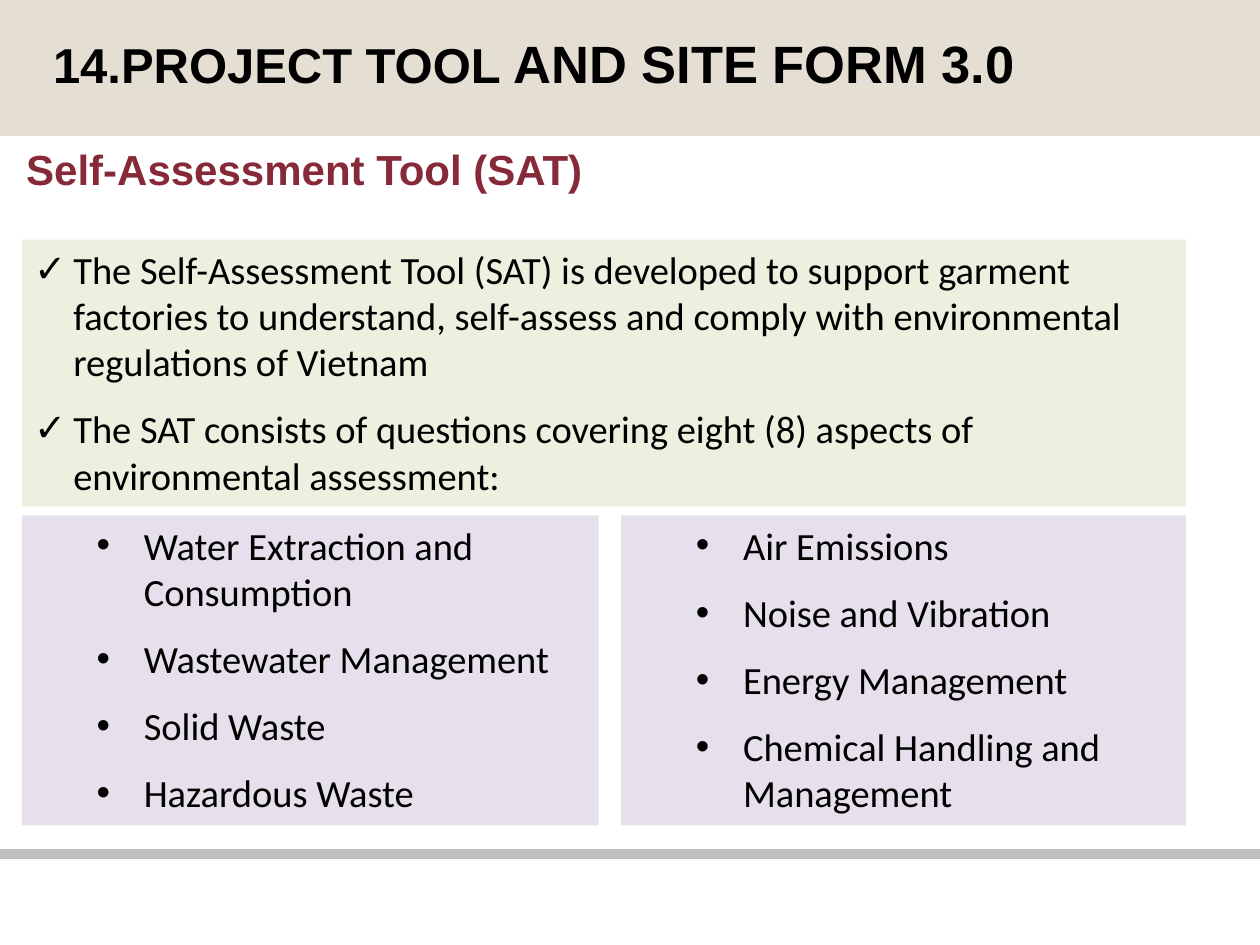
from lxml import etree
from pptx import Presentation
from pptx import util as u
from pptx.dml.color import RGBColor
from pptx.enum import shapes, text
from pptx.oxml import ns

BLACK = RGBColor(0x00, 0x00, 0x00)
MAROON = RGBColor(0x86, 0x2A, 0x39)
SAND = RGBColor(0xE4, 0xDF, 0xD2)
GREY = RGBColor(0xBF, 0xBF, 0xBF)
GREEN = RGBColor(0xEB, 0xF1, 0xDE)
LILAC = RGBColor(0xE6, 0xE0, 0xEC)


class SlideBuilder:
    heading_font = "Arial"
    body_font = "Calibri"
    body_size = 22

    def __init__(self, slide):
        self.slide = slide

    def bar(self, left, top, width, height, fill, line_width=None):
        bar = self.slide.shapes.add_shape(
            shapes.MSO_SHAPE.RECTANGLE, *map(u.Cm, (left, top, width, height)))
        bar.shadow.inherit = False
        bar.fill.solid()
        bar.fill.fore_color.rgb = fill
        if line_width:
            bar.line.color.rgb = fill
            bar.line.width = u.Pt(line_width)
        else:
            bar.line.fill.background()
        return bar

    def heading(self, left, top, width, height, parts, color):
        """Add a bold one-line heading from (wording, size) parts."""
        box = self.slide.shapes.add_textbox(*map(u.Cm, (left, top, width, height)))
        frame = box.text_frame
        frame.word_wrap = True
        paragraph = frame.paragraphs[0]
        self.style(paragraph, self.heading_font, color, bold=True)
        for wording, size in parts:
            run = paragraph.add_run()
            run.text = wording
            run.font.size = u.Pt(size)
        return frame

    def panel(self, left, top, width, height, fill, items, bullet, margin, hanging, level=0):
        frame = self.bar(left, top, width, height, fill).text_frame
        frame.word_wrap = True
        frame.auto_size = text.MSO_AUTO_SIZE.SHAPE_TO_FIT_TEXT
        frame.vertical_anchor = text.MSO_ANCHOR.TOP
        for index, item in enumerate(items):
            paragraph = frame.add_paragraph() if index else frame.paragraphs[0]
            paragraph.text = item
            paragraph.level = level
            paragraph.alignment = text.PP_ALIGN.LEFT
            self.bullet(paragraph, bullet, margin, hanging)
            paragraph.space_before = paragraph.space_after = u.Pt(6)
            self.style(paragraph, self.body_font, BLACK)
            paragraph.font.size = u.Pt(self.body_size)

    def style(self, paragraph, font, color, bold=False):
        paragraph.font.name = font
        paragraph.font.bold = bold
        paragraph.font.color.rgb = color

    def bullet(self, paragraph, character, margin, hanging):
        properties = paragraph._p.get_or_add_pPr()
        properties.set("marL", str(u.Cm(margin)))
        properties.set("indent", str(-u.Cm(hanging)))
        etree.SubElement(properties, ns.qn("a:buFont"), typeface="Arial")
        etree.SubElement(properties, ns.qn("a:buChar"), char=character)


def main():
    deck = Presentation()
    deck.slide_width, deck.slide_height = u.Cm(25.4), u.Cm(19.05)
    page = SlideBuilder(deck.slides.add_slide(deck.slide_layouts[6]))

    # Footer rule and title band
    page.bar(0, 17.15, 25.4, 0.13, GREY, line_width=2)
    page.bar(-0.08, 0, 25.48, 2.74, SAND)

    # Headings
    page.heading(0.28, 2.77, 24.5, 1.27, [("Self-Assessment Tool (SAT)", 24)], MAROON)
    title = page.heading(1.07, 0.74, 23.06, 1.17,
                         [("14.PROJECT TOOL ", 28), ("AND SITE FORM 3.0", 30)], BLACK)
    title.margin_left = title.margin_top = title.margin_right = title.margin_bottom = 0
    title.paragraphs[0].line_spacing = u.Pt(32.7)
    title.paragraphs[0].space_before = u.Pt(1.6)

    # Introduction
    introduction = [
        "The Self-Assessment Tool (SAT) is developed to support garment factories to "
        "understand, self-assess and comply with environmental regulations of Vietnam",
        "The SAT consists of questions covering eight (8) aspects of environmental assessment:",
    ]
    page.panel(0.44, 4.83, 23.47, 5.38, GREEN, introduction, "✓", 0.79, 0.79)

    # The eight aspects, in two columns
    aspects = [
        (0.44, 11.63, ["Water Extraction and Consumption", "Wastewater Management",
                       "Solid Waste", "Hazardous Waste"]),
        (12.52, 11.39, ["Air Emissions", "Noise and Vibration",
                        "Energy Management", "Chemical Handling and Management"]),
    ]
    for left, width, names in aspects:
        page.panel(left, 10.39, width, 6.25, LILAC, names, "•", 2.21, 0.95, level=1)

    deck.save("out.pptx")


if __name__ == "__main__":
    main()
